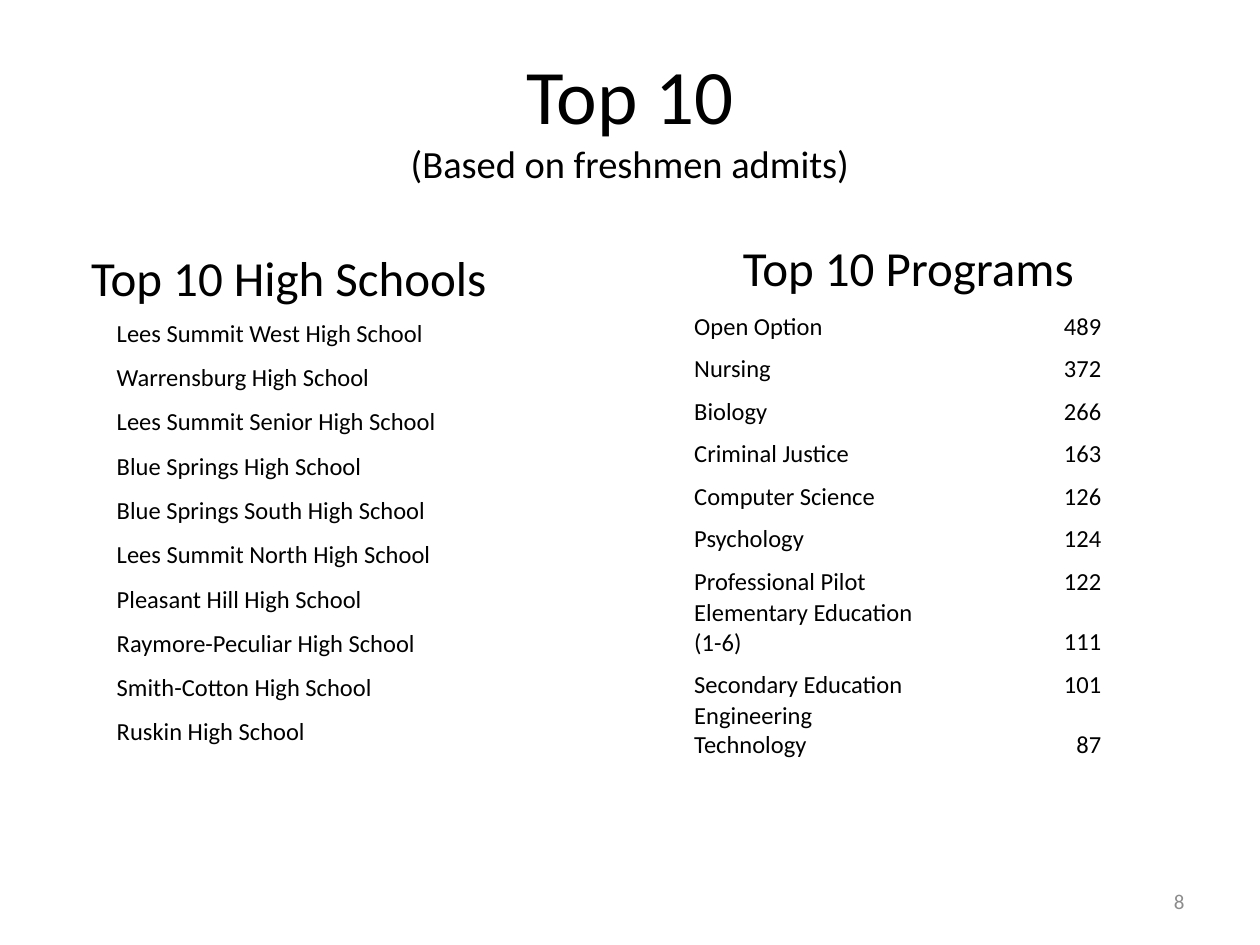
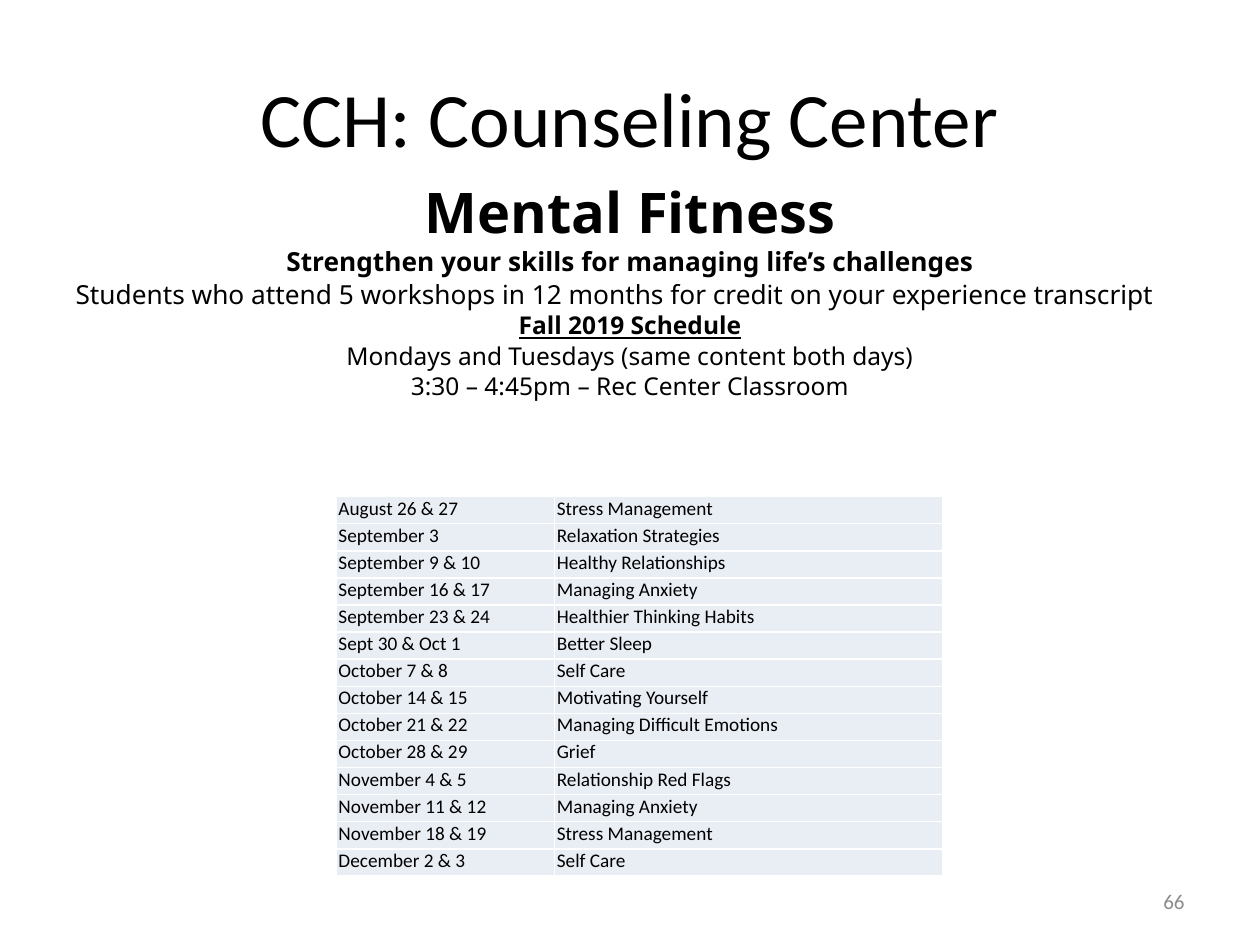
from lxml.etree import SubElement
from pptx import Presentation
from pptx.dml.color import RGBColor
from pptx.enum.text import MSO_ANCHOR as Anchor, MSO_AUTO_SIZE as AutoSize, PP_ALIGN as Align
from pptx.oxml.ns import qn
from pptx.util import Inches, Pt

BLACK = RGBColor(0x00, 0x00, 0x00)
WHITE = RGBColor(0xFF, 0xFF, 0xFF)
NUMBER_GRAY = RGBColor(0x8C, 0x8C, 0x8C)
PALE_BLUE = RGBColor(0xE9, 0xED, 0xF4)
MAIN_FONT = "Calibri"
FLYER_FONT = "Noto Sans"
COLUMNS, ROWS = 120, 90
PLAIN_TABLE = "{2D5ABB26-0587-4C30-8999-92F81FD0307C}"

HIGH_SCHOOLS = [
    "Lees Summit West", "Warrensburg", "Lees Summit Senior", "Blue Springs",
    "Blue Springs South", "Lees Summit North", "Pleasant Hill",
    "Raymore-Peculiar", "Smith-Cotton", "Ruskin",
]
PROGRAMS = [
    ("Open Option", "489"),
    ("Nursing", "372"),
    ("Biology", "266"),
    ("Criminal Justice", "163"),
    ("Computer Science", "126"),
    ("Psychology", "124"),
    ("Professional Pilot", "122"),
    ("Elementary Education (1-6)", "111"),
    ("Secondary Education", "101"),
    ("Engineering Technology", "87"),
]
FLYER = [
    ("Mental Fitness", 32, True, False, Align.CENTER),
    ("Strengthen your skills for managing life’s challenges", 15, True, False, Align.CENTER),
    ("Students who attend 5 workshops in 12 months for credit on your experience transcript",
     15, False, False, Align.LEFT),
    ("Fall 2019 Schedule", 14, True, True, Align.CENTER),
    ("Mondays and Tuesdays (same content both days)", 14, False, False, Align.CENTER),
    ("3:30 – 4:45pm – Rec Center Classroom", 14, False, False, Align.CENTER),
]
WORKSHOPS = [
    ("August 26 & 27", "Stress Management"),
    ("September 3", "Relaxation Strategies"),
    ("September 9 & 10", "Healthy Relationships"),
    ("September 16 & 17", "Managing Anxiety"),
    ("September 23 & 24", "Healthier Thinking Habits"),
    ("Sept 30 & Oct 1", "Better Sleep"),
    ("October 7 & 8", "Self Care"),
    ("October 14 & 15", "Motivating Yourself"),
    ("October 21 & 22", "Managing Difficult Emotions"),
    ("October 28 & 29", "Grief"),
    ("November 4 & 5", "Relationship Red Flags"),
    ("November 11 & 12", "Managing Anxiety"),
    ("November 18 & 19", "Stress Management"),
    ("December 2 & 3", "Self Care"),
]


class Deck:
    def __init__(self):
        self.prs = Presentation()
        self.prs.slide_width, self.prs.slide_height = Inches(10), Inches(7.5)
        self.slide = None

    def x(self, columns):
        return round(self.prs.slide_width * columns / COLUMNS)

    def y(self, rows):
        return round(self.prs.slide_height * rows / ROWS)

    def box(self, left, top, width, height):
        return self.x(left), self.y(top), self.x(width), self.y(height)

    def style(self, paragraph, size, align=Align.LEFT, color=BLACK, font=MAIN_FONT,
              bold=False, underline=False):
        paragraph.alignment = align
        paragraph.font.name = font
        paragraph.font.size = Pt(size)
        paragraph.font.bold = bold
        paragraph.font.underline = underline
        paragraph.font.color.rgb = color

    def place(self, shape, area):
        shape.left, shape.top, shape.width, shape.height = self.box(*area)
        shape.text_frame.auto_size = AutoSize.NONE
        return shape.text_frame

    def start(self, title, number, subtitle=None):
        self.slide = self.prs.slides.add_slide(self.prs.slide_layouts[1])
        frame = self.place(self.slide.shapes.title, (6, 3.6, 108, 15))
        frame.vertical_anchor = Anchor.MIDDLE
        heading = frame.paragraphs[0]
        heading.add_run().text = title
        self.style(heading, 44, Align.CENTER)
        if subtitle:
            heading.add_line_break()
            run = heading.add_run()
            run.text = subtitle
            run.font.size = Pt(22)
        self.text(number, (86, 83.4, 28, 4.8), 12, Align.RIGHT, NUMBER_GRAY, Anchor.MIDDLE)

    def text(self, words, area, size, align, color=BLACK, anchor=Anchor.TOP):
        frame = self.slide.shapes.add_textbox(*self.box(*area)).text_frame
        frame.word_wrap = True
        frame.vertical_anchor = anchor
        frame.text = words
        self.style(frame.paragraphs[0], size, align, color)

    def body(self, lines, area, font=MAIN_FONT, spacing=1.0, gap=0):
        frame = self.place(self.slide.placeholders[1], area)
        for index, (words, size, bold, underline, align) in enumerate(lines):
            paragraph = frame.add_paragraph() if index else frame.paragraphs[0]
            paragraph.text = words
            paragraph.line_spacing = spacing
            paragraph.space_before = Pt(gap)
            self.style(paragraph, size, align, font=font, bold=bold, underline=underline)
            properties = paragraph._p.get_or_add_pPr()
            properties.set("marL", "0")
            properties.set("indent", "0")
            SubElement(properties, qn("a:buNone"))

    def table(self, records, left, top, widths, heights, size, margins,
              anchor=Anchor.TOP, aligns=(Align.LEFT, Align.LEFT), fill=None):
        area = self.box(left, top, sum(widths), sum(heights))
        frame = self.slide.shapes.add_table(len(records), len(widths), *area)
        table = frame.table
        table.first_row = table.horz_banding = False
        table._tbl.tblPr.find(qn("a:tableStyleId")).text = PLAIN_TABLE
        for column, width in zip(table.columns, widths):
            column.width = self.x(width)
        for row, height, record in zip(table.rows, heights, records):
            row.height = self.y(height)
            for cell, words, align in zip(row.cells, record, aligns):
                side, above = margins
                cell.margin_left = cell.margin_right = Inches(side)
                cell.margin_top, cell.margin_bottom = Inches(above), 0
                cell.vertical_anchor = anchor
                cell.text = words
                self.style(cell.text_frame.paragraphs[0], size, align)
                if fill is None:
                    cell.fill.background()
                else:
                    self.border(cell)
                    cell.fill.solid()
                    cell.fill.fore_color.rgb = fill

    def border(self, cell):
        properties = cell._tc.get_or_add_tcPr()
        for edge in ("lnL", "lnR", "lnT", "lnB"):
            line = SubElement(properties, qn(f"a:{edge}"), w=str(Pt(1)))
            paint = SubElement(line, qn("a:solidFill"))
            SubElement(paint, qn("a:srgbClr"), val=str(WHITE))


def top_ten(deck):
    deck.start("Top 10", "8", "(Based on freshmen admits)")
    deck.body([("Top 10 Programs", 28, False, False, Align.CENTER)], (64, 22, 45, 6.5))
    deck.text("Top 10 High Schools", (5, 23, 45, 6.5), 28, Align.CENTER)
    ranking = dict(size=14, margins=(0.01, 0.01), anchor=Anchor.BOTTOM,
                   aligns=(Align.LEFT, Align.RIGHT))
    schools = [(f"{name} High School",) for name in HIGH_SCHOOLS]
    deck.table(schools, 11, 29, [37], [4.22] * len(schools), **ranking)
    program_heights = [4.05] * 7 + [5.28] + [4.05] * 2
    deck.table(PROGRAMS, 66, 28.5, [22.1, 16.9], program_heights, **ranking)


def counseling_center(deck):
    deck.start("CCH: Counseling Center", "66")
    deck.body(FLYER, (6, 17, 108, 63.4), FLYER_FONT, spacing=0.9, gap=2.2)
    deck.table(WORKSHOPS, 32, 47.3, [20.8, 37], [2.58] * len(WORKSHOPS),
               size=11, margins=(0.02, 0), fill=PALE_BLUE)


def main():
    deck = Deck()
    top_ten(deck)
    counseling_center(deck)
    deck.prs.save("out.pptx")


if __name__ == "__main__":
    main()
